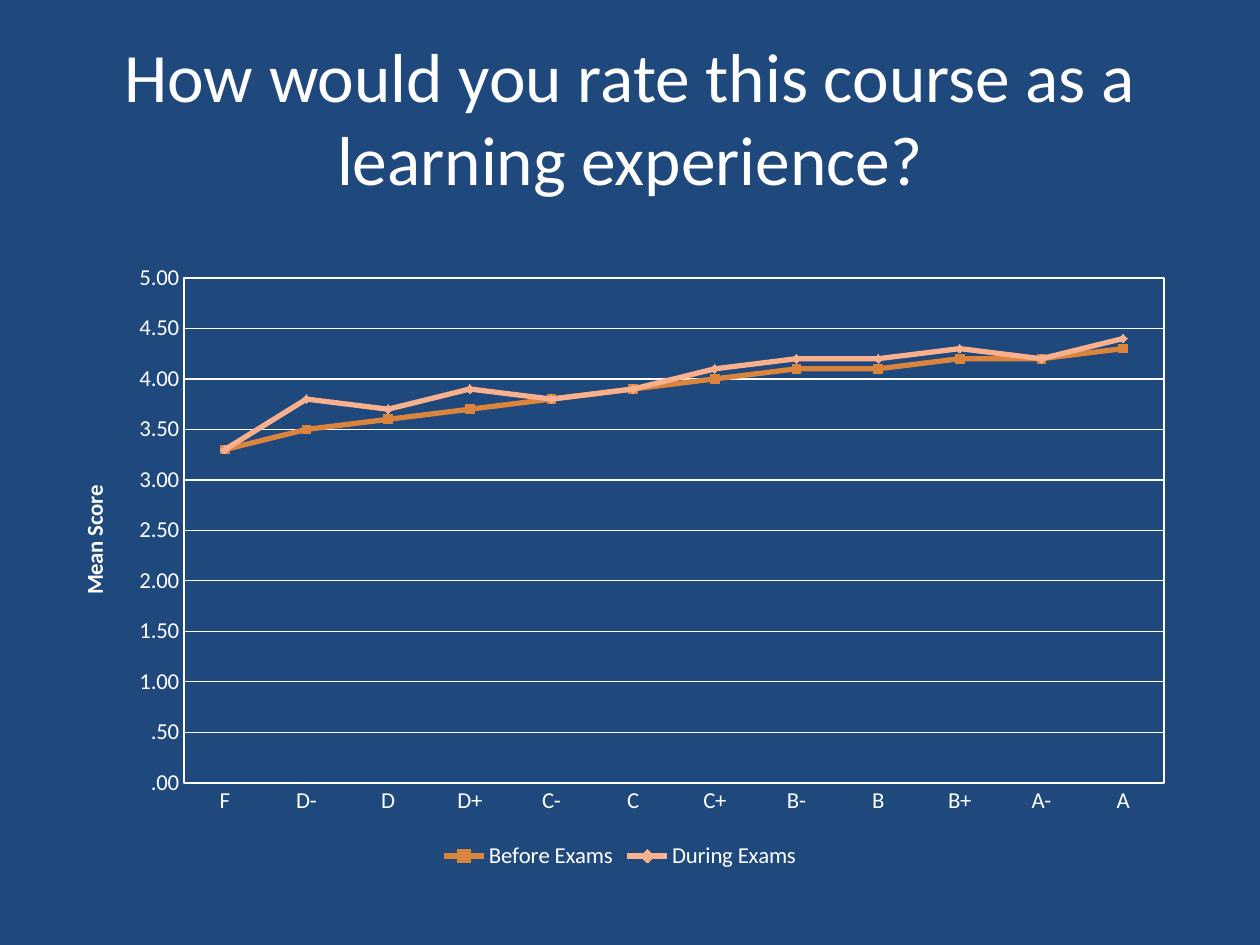
from lxml import etree
from pptx import Presentation, util as u
from pptx.chart.data import CategoryChartData
from pptx.dml.color import RGBColor
from pptx.enum import chart as charts, text
from pptx.oxml import parse_xml
from pptx.oxml.ns import nsdecls, qn

NAVY = RGBColor(0x1F, 0x49, 0x7D)
WHITE = RGBColor(0xFF, 0xFF, 0xFF)
ORANGE = RGBColor(0xDB, 0x84, 0x3D)
PEACH = RGBColor(0xF9, 0xB0, 0x8D)
PX = u.Inches(1) / 126

GRADES = ["F", "D-", "D", "D+", "C-", "C", "C+", "B-", "B", "B+", "A-", "A"]
SCORES = {
    "Before Exams": [3.3, 3.5, 3.6, 3.7, 3.8, 3.9, 4, 4.1, 4.1, 4.2, 4.2, 4.3],
    "During Exams": [3.3, 3.8, 3.7, 3.9, 3.8, 3.9, 4.1, 4.2, 4.2, 4.3, 4.2, 4.4],
}
MARKERS = [
    (ORANGE, charts.XL_MARKER_STYLE.SQUARE),
    (PEACH, charts.XL_MARKER_STYLE.DIAMOND),
]


def px(*lengths):
    return [u.Emu(round(length * PX)) for length in lengths]


def apply(target, values):
    for name, value in values.items():
        setattr(target, name, value)


class SlideBuilder:
    font_name = "Calibri"

    def __init__(self, deck):
        self.page = deck.slides.add_slide(deck.slide_layouts[5])
        fill = self.page.background.fill
        fill.solid()
        fill.fore_color.rgb = NAVY

    def style_font(self, font, size, bold=False):
        apply(font, {"name": self.font_name, "size": u.Pt(size), "bold": bold})
        font.color.rgb = WHITE

    def style_line(self, line, color, width):
        line.color.rgb = color
        line.width = u.Pt(width)

    def title(self, wording, left, top, width, height):
        box = self.page.shapes.title
        apply(box, dict(zip(("left", "top", "width", "height"), px(left, top, width, height))))
        frame = box.text_frame
        apply(frame, {"word_wrap": True, "auto_size": text.MSO_AUTO_SIZE.NONE,
                      "vertical_anchor": text.MSO_ANCHOR.MIDDLE})
        para = frame.paragraphs[0]
        para.alignment = text.PP_ALIGN.CENTER
        span = para.add_run()
        span.text = wording
        self.style_font(span.font, 39.6)

    def place(self, parent, index, chart_size, **lengths):
        for old in parent.findall(qn("c:layout")):
            parent.remove(old)
        layout = parse_xml(f"<c:layout {nsdecls('c')}><c:manualLayout/></c:layout>")
        values = {"xMode": "edge", "yMode": "edge"}
        if "w" in lengths:
            values = {"layoutTarget": "inner", **values}
        width, height = chart_size
        for tag, length in lengths.items():
            values[tag] = length / (width if tag in "xw" else height)
        for tag, value in values.items():
            etree.SubElement(layout[0], qn(f"c:{tag}")).set("val", str(value))
        parent.insert(index, layout)

    def line_chart(self, categories, series, axis_name, left, top, width, height):
        data = CategoryChartData(number_format="####.00")
        data.categories = categories
        for name, values in series.items():
            data.add_series(name, values)
        chart = self.page.shapes.add_chart(
            charts.XL_CHART_TYPE.LINE_MARKERS, *px(left, top, width, height), data).chart
        self.style_font(chart.font, 13)
        apply(chart, {"has_title": False, "has_legend": True})
        apply(chart.legend, {"position": charts.XL_LEGEND_POSITION.BOTTOM,
                             "include_in_layout": False})
        self.style_font(chart.legend.font, 13)
        plot = chart.plots[0]
        plot.vary_by_categories = False
        for item, (color, marker) in zip(plot.series, MARKERS):
            item.smooth = False
            self.style_line(item.format.line, color, 3)
            apply(item.marker, {"style": marker, "size": 5})
            item.marker.format.fill.solid()
            item.marker.format.fill.fore_color.rgb = color
            self.style_line(item.marker.format.line, color, 0.75)
        self.axes(chart, axis_name)
        area = chart._chartSpace.chart.plotArea
        self.place(area, 0, (width, height), x=131, y=26, w=980, h=505)
        self.place(chart.value_axis.axis_title._element, 1, (width, height), x=22, y=229)
        area.append(parse_xml(
            f"<c:spPr {nsdecls('c', 'a')}><a:noFill/><a:ln w='9525'><a:solidFill>"
            f"<a:srgbClr val='{WHITE}'/></a:solidFill></a:ln></c:spPr>"))

    def axes(self, chart, axis_name):
        for axis in (chart.category_axis, chart.value_axis):
            apply(axis, {"major_tick_mark": charts.XL_TICK_MARK.NONE,
                         "minor_tick_mark": charts.XL_TICK_MARK.NONE})
            self.style_font(axis.tick_labels.font, 13)
        self.style_line(chart.category_axis.format.line, WHITE, 0.75)
        scores = chart.value_axis
        apply(scores, {"minimum_scale": 0, "maximum_scale": 5, "major_unit": 0.5,
                       "has_major_gridlines": True, "has_title": True})
        apply(scores.tick_labels, {"number_format": "####.00", "number_format_is_linked": False})
        scores.format.line.fill.background()
        self.style_line(scores.major_gridlines.format.line, WHITE, 0.75)
        frame = scores.axis_title.text_frame
        frame.text = axis_name
        self.style_font(frame.paragraphs[0].runs[0].font, 13, bold=True)
        frame._txBody.bodyPr.set("rot", "-5400000")


def main():
    deck = Presentation()
    apply(deck, {"slide_width": u.Inches(10), "slide_height": u.Inches(7.5)})
    slide = SlideBuilder(deck)
    slide.title("How would you rate this course as a learning experience?", 63, 37, 1134, 158)
    slide.line_chart(GRADES, SCORES, "Mean Score", 53, 252, 1134, 623)
    deck.save("out.pptx")


if __name__ == "__main__":
    main()
